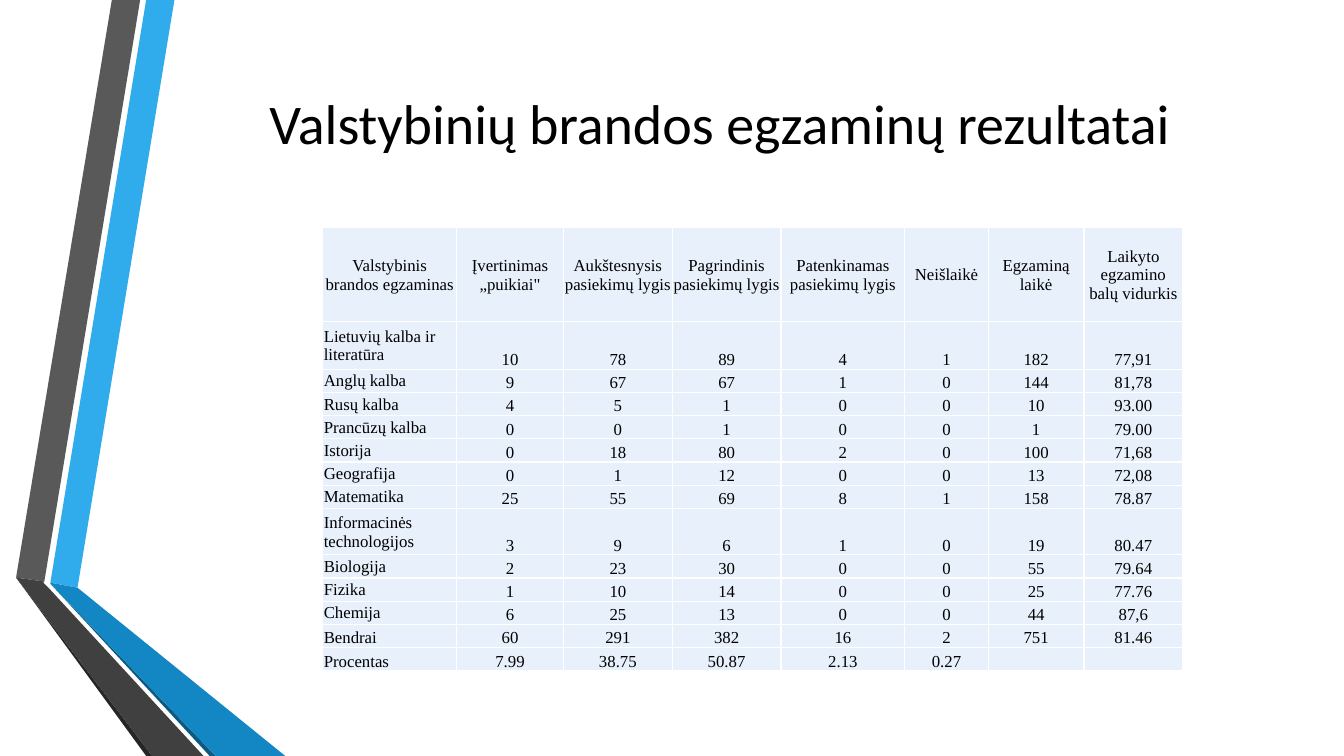
"""Build a slide with a table of state graduation exam results beside a folded ribbon."""
from dataclasses import dataclass

from lxml import etree
from pptx import Presentation
from pptx import util as u
from pptx.dml.color import RGBColor
from pptx.enum import text
from pptx.oxml import ns
from pptx.slide import Slide
from pptx.table import _Cell as Cell
from pptx.text.text import TextFrame

Pt = u.Pt
BLACK = RGBColor(0x00, 0x00, 0x00)
CELL_BLUE = RGBColor(0xE8, 0xF1, 0xFB)
SKY_BLUE = RGBColor(0x30, 0xAC, 0xEC)
MID_BLUE = RGBColor(0x12, 0x87, 0xC3)
DEEP_BLUE = RGBColor(0x0C, 0x5A, 0x82)
GRAY = RGBColor(0x59, 0x59, 0x59)
DARK_GRAY = RGBColor(0x40, 0x40, 0x40)
NEAR_BLACK = RGBColor(0x26, 0x26, 0x26)
BORDER_COLOR = "FFFFFF"

TITLE = "Valstybinių brandos egzaminų rezultatai"
TABLE_LEFT, TABLE_TOP = 230.6, 162.7
COLUMN_WIDTHS = (95.6, 76.3, 77.8, 77.6, 88.5, 59.6, 68.4, 70.5)
LINE_HEIGHT = 16.6
HEADERS = (
    "Valstybinis brandos egzaminas", "Įvertinimas „puikiai\"",
    "Aukštesnysis pasiekimų lygis", "Pagrindinis pasiekimų lygis",
    "Patenkinamas pasiekimų lygis", "Neišlaikė", "Egzaminą laikė",
    "Laikyto egzamino balų vidurkis",
)


@dataclass(frozen=True)
class Ribbon:
    color: RGBColor
    points: tuple[tuple[float, float], ...]


@dataclass(frozen=True)
class ResultRow:
    label: str
    values: str
    height: float = LINE_HEIGHT
    label_anchor: text.MSO_ANCHOR = text.MSO_ANCHOR.MIDDLE


RIBBONS = (
    Ribbon(SKY_BLUE, ((36, 416.2), (55.4, 419.8), (124.6, 0), (104.4, 0))),
    Ribbon(GRAY, ((100.1, 0), (79.9, 0), (11.5, 412.6), (31.7, 415.4))),
    Ribbon(NEAR_BLACK, ((11.5, 412.6), (104.4, 540), (108.7, 540))),
    Ribbon(DEEP_BLUE, ((36, 416.9), (149.8, 540), (154.1, 540))),
    Ribbon(MID_BLUE, ((36, 416.9), (154.1, 540), (203.8, 540), (55.4, 419.8), (36, 416.2))),
    Ribbon(DARK_GRAY, ((145.4, 540), (34.6, 419.8), (31, 416.2), (31.7, 415.4),
                       (11.5, 412.6), (108.7, 540))),
)

RESULTS = (
    ResultRow("Lietuvių kalba ir literatūra", "10 78 89 4 1 182 77,91", 34),
    ResultRow("Anglų kalba", "9 67 67 1 0 144 81,78"),
    ResultRow("Rusų kalba", "4 5 1 0 0 10 93.00"),
    ResultRow("Prancūzų kalba", "0 0 1 0 0 1 79.00"),
    ResultRow("Istorija", "0 18 80 2 0 100 71,68"),
    ResultRow("Geografija", "0 1 12 0 0 13 72,08"),
    ResultRow("Matematika", "25 55 69 8 1 158 78.87"),
    ResultRow("Informacinės technologijos", "3 9 6 1 0 19 80.47", 33.1),
    ResultRow("Biologija", "2 23 30 0 0 55 79.64"),
    ResultRow("Fizika", "1 10 14 0 0 25 77.76"),
    ResultRow("Chemija", "6 25 13 0 0 44 87,6"),
    ResultRow("Bendrai", "60 291 382 16 2 751 81.46", label_anchor=text.MSO_ANCHOR.BOTTOM),
    ResultRow("Procentas", "7.99 38.75 50.87 2.13 0.27", label_anchor=text.MSO_ANCHOR.BOTTOM),
)


def write(frame: TextFrame, wording: str, font_name: str, size: float,
          alignment: text.PP_ALIGN) -> None:
    """Put one formatted paragraph into a text frame."""
    frame.text = wording
    paragraph = frame.paragraphs[0]
    paragraph.alignment = alignment
    for run in paragraph.runs:
        run.font.name = font_name
        run.font.size = Pt(size)
        run.font.color.rgb = BLACK


def draw_ribbon(slide: Slide, ribbon: Ribbon) -> None:
    """Draw one filled face of the folded ribbon."""
    start, *others = [(Pt(x), Pt(y)) for x, y in ribbon.points]
    builder = slide.shapes.build_freeform(*start)
    builder.add_line_segments(others, close=True)
    shape = builder.convert_to_shape()
    shape.shadow.inherit = False
    shape.fill.solid()
    shape.fill.fore_color.rgb = ribbon.color
    shape.line.fill.background()


def draw_title(slide: Slide) -> None:
    """Draw the centred heading."""
    box = slide.shapes.add_textbox(Pt(119.5), Pt(18), Pt(789.1), Pt(138.2))
    box.text_frame.word_wrap = True
    box.text_frame.vertical_anchor = text.MSO_ANCHOR.MIDDLE
    write(box.text_frame, TITLE, "Calibri", 40, text.PP_ALIGN.CENTER)


def fill_cell(cell: Cell, wording: str, alignment: text.PP_ALIGN,
              anchor: text.MSO_ANCHOR) -> None:
    """Write and colour one table cell."""
    cell.margin_left = cell.margin_right = cell.margin_top = Pt(0.7)
    cell.margin_bottom = Pt(0)
    cell.vertical_anchor = anchor
    cell.fill.solid()
    cell.fill.fore_color.rgb = CELL_BLUE
    write(cell.text_frame, wording, "Times New Roman", 12, alignment)


def finish_cells(table_element: etree._Element) -> None:
    """Give every cell thin borders and a small paragraph end."""
    for properties in table_element.iter(ns.qn("a:tcPr")):
        for position, side in enumerate(("lnL", "lnR", "lnT", "lnB")):
            line = etree.Element(ns.qn(f"a:{side}"), w=str(Pt(1)))
            fill = etree.SubElement(line, ns.qn("a:solidFill"))
            etree.SubElement(fill, ns.qn("a:srgbClr"), val=BORDER_COLOR)
            properties.insert(position, line)
    for paragraph in table_element.iter(ns.qn("a:p")):
        etree.SubElement(paragraph, ns.qn("a:endParaRPr"), sz="1200")


def draw_results(slide: Slide) -> None:
    """Draw the table of exam results."""
    heights = (67, *(result.height for result in RESULTS))
    graphic_frame = slide.shapes.add_table(
        len(heights), len(COLUMN_WIDTHS), Pt(TABLE_LEFT), Pt(TABLE_TOP),
        Pt(sum(COLUMN_WIDTHS)), Pt(sum(heights)))
    table = graphic_frame.table
    for column, width in zip(table.columns, COLUMN_WIDTHS):
        column.width = Pt(width)
    for row, height in zip(table.rows, heights):
        row.height = Pt(height)
    for index, header in enumerate(HEADERS):
        fill_cell(table.cell(0, index), header, text.PP_ALIGN.CENTER, text.MSO_ANCHOR.MIDDLE)
    for row_index, result in enumerate(RESULTS, start=1):
        fill_cell(table.cell(row_index, 0), result.label, text.PP_ALIGN.LEFT,
                  result.label_anchor)
        values = result.values.split()
        values += [""] * (len(HEADERS) - 1 - len(values))
        for column_index, value in enumerate(values, start=1):
            fill_cell(table.cell(row_index, column_index), value, text.PP_ALIGN.CENTER,
                      text.MSO_ANCHOR.BOTTOM)
    finish_cells(graphic_frame.element)


def main() -> None:
    """Assemble and save the presentation."""
    presentation = Presentation()
    presentation.slide_width, presentation.slide_height = Pt(960), Pt(540)
    slide = presentation.slides.add_slide(presentation.slide_layouts[6])
    for ribbon in RIBBONS:
        draw_ribbon(slide, ribbon)
    draw_title(slide)
    draw_results(slide)
    presentation.save("out.pptx")


if __name__ == "__main__":
    main()
